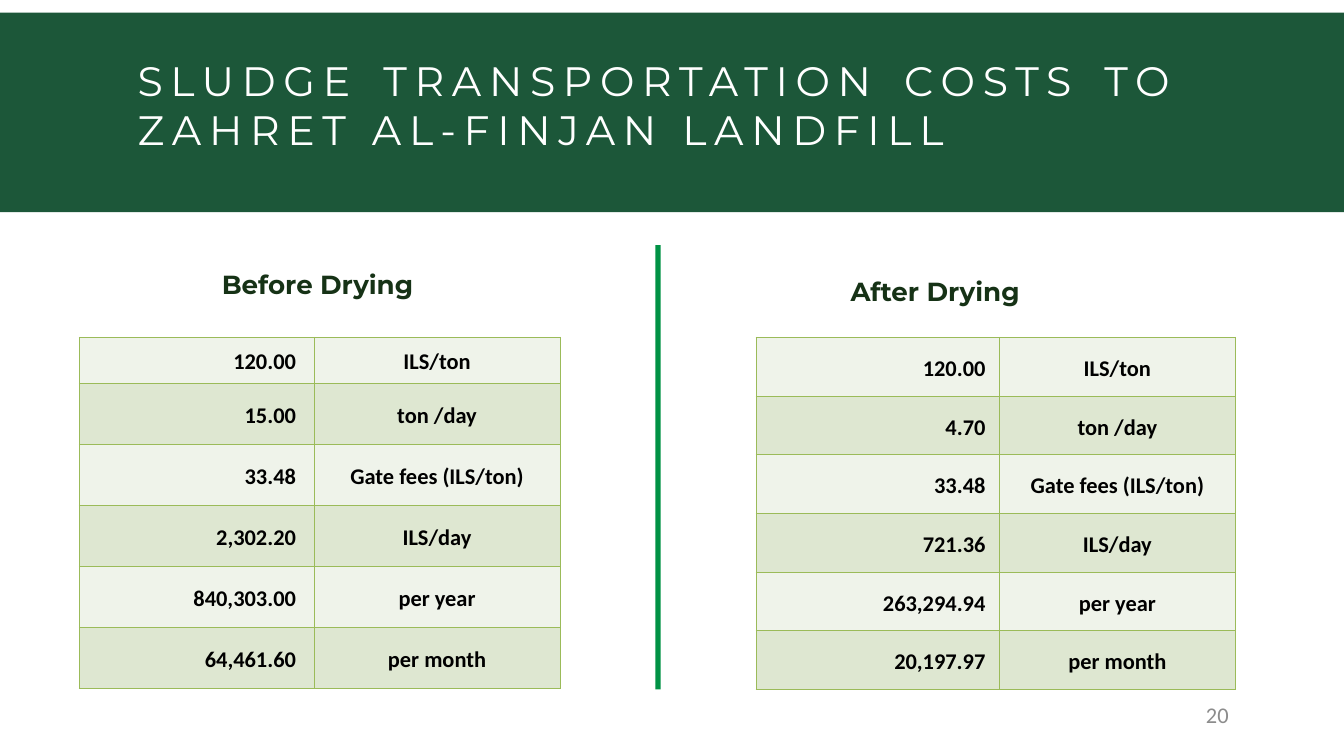
import pptx
import pptx.util
import pptx.dml.color
import pptx.enum.shapes
import pptx.enum.text
import pptx.oxml
import pptx.oxml.ns

Cm = pptx.util.Cm
Pt = pptx.util.Pt
RGBColor = pptx.dml.color.RGBColor
ALIGN = pptx.enum.text.PP_ALIGN
ANCHOR = pptx.enum.text.MSO_ANCHOR

BAND_GREEN = RGBColor(0x1C, 0x57, 0x39)
DIVIDER_GREEN = RGBColor(0x00, 0x92, 0x45)
HEADING_GREEN = RGBColor(0x16, 0x32, 0x16)
BORDER_GREEN = RGBColor(0x9B, 0xBB, 0x59)
ROW_FILLS = (RGBColor(0xEF, 0xF3, 0xEA), RGBColor(0xDE, 0xE7, 0xD1))
WHITE = RGBColor(0xFF, 0xFF, 0xFF)
BLACK = RGBColor(0, 0, 0)
GREY = RGBColor(0x8C, 0x8C, 0x8C)

UNITS = ("ILS/ton", "ton /day", "Gate fees (ILS/ton)", "ILS/day", "per year", "per month")
BEFORE = ("120.00", "15.00", "33.48", "2,302.20", "840,303.00", "64,461.60")
AFTER = ("120.00", "4.70", "33.48", "721.36", "263,294.94", "20,197.97")


class SlideBuilder:
    heading_font = "Montserrat"
    body_font = "Calibri"

    def __init__(self, prs):
        self.s = prs.slides.add_slide(prs.slide_layouts[5])

    def add_text(self, tf, text, size, color, font, align, bold=False, spacing=None):
        p = tf.paragraphs[0]
        p.alignment = align
        if spacing:
            p.line_spacing = spacing
        r = p.add_run()
        r.text = text
        r.font.size = Pt(size)
        r.font.name = font
        r.font.bold = bold
        r.font.color.rgb = color
        return r

    def frame(self, sp, anchor):
        tf = sp.text_frame
        tf.word_wrap = True
        tf.auto_size = pptx.enum.text.MSO_AUTO_SIZE.NONE
        tf.vertical_anchor = anchor
        tf.margin_left = tf.margin_right = tf.margin_top = tf.margin_bottom = 0
        return tf

    def rect(self, x, y, w, h, color):
        sp = self.s.shapes.add_shape(
            pptx.enum.shapes.MSO_SHAPE.RECTANGLE, Cm(x), Cm(y), Cm(w), Cm(h))
        sp.shadow.inherit = False
        sp.fill.solid()
        sp.fill.fore_color.rgb = color
        sp.line.fill.background()

    def title(self, x, y, w, h, text):
        sp = self.s.shapes.title
        sp.left, sp.top, sp.width, sp.height = Cm(x), Cm(y), Cm(w), Cm(h)
        sp.element.getparent().append(sp.element)
        tf = self.frame(sp, ANCHOR.TOP)
        r = self.add_text(tf, text, 44, WHITE, self.heading_font, ALIGN.JUSTIFY)
        r.font._element.set("spc", "820")

    def heading(self, x, y, w, h, text):
        sp = self.s.shapes.add_textbox(Cm(x), Cm(y), Cm(w), Cm(h))
        self.add_text(self.frame(sp, ANCHOR.TOP), text, 28, HEADING_GREEN,
                      self.heading_font, ALIGN.CENTER, True, Pt(32.3))

    def page_number(self, x, y, w, h, text):
        sp = self.s.shapes.add_textbox(Cm(x), Cm(y), Cm(w), Cm(h))
        tf = self.frame(sp, ANCHOR.MIDDLE)
        tf.margin_right = Cm(0.25)
        self.add_text(tf, text, 24, GREY, self.body_font, ALIGN.RIGHT)

    def border(self, cell):
        tc_pr = cell._tc.get_or_add_tcPr()
        for side in ("lnL", "lnR", "lnT", "lnB"):
            tc_pr.append(pptx.oxml.parse_xml(
                f'<a:{side} {pptx.oxml.ns.nsdecls("a")} w="12700"><a:solidFill>'
                f'<a:srgbClr val="{BORDER_GREEN}"/></a:solidFill></a:{side}>'))

    def cost_table(self, x, y, col_widths, row_heights, values, value_inset):
        table = self.s.shapes.add_table(
            len(values), 2, Cm(x), Cm(y), Cm(sum(col_widths)), Cm(sum(row_heights))).table
        table.first_row = table.horz_banding = False
        for col, width in zip(table.columns, col_widths):
            col.width = Cm(width)
        for i, (row, height) in enumerate(zip(table.rows, row_heights)):
            row.height = Cm(height)
            columns = ((values[i], ALIGN.RIGHT, value_inset), (UNITS[i], ALIGN.CENTER, 0.18))
            for cell, (text, align, inset) in zip(row.cells, columns):
                self.border(cell)
                cell.fill.solid()
                cell.fill.fore_color.rgb = ROW_FILLS[i % 2]
                cell.vertical_anchor = ANCHOR.MIDDLE
                cell.margin_left, cell.margin_right = Cm(0.18), Cm(inset)
                cell.margin_top = cell.margin_bottom = 0
                self.add_text(cell.text_frame, text, 24, BLACK, self.body_font,
                              align, True, 1.15)


def main():
    prs = pptx.Presentation()
    prs.slide_width, prs.slide_height = Cm(50.8), Cm(28.58)
    b = SlideBuilder(prs)
    b.rect(0, 0.48, 50.8, 7.54, BAND_GREEN)
    b.rect(24.77, 9.27, 0.2, 16.79, DIVIDER_GREEN)
    b.title(5.2, 2.1, 39.35, 3.76, "SLUDGE TRANSPORTATION COSTS TO ZAHRET AL-FINJAN LANDFILL")
    b.heading(29.87, 10.46, 10.95, 2.29, "After Drying")
    b.heading(8.2, 10.2, 7.6, 1.15, "Before Drying")
    b.page_number(40.77, 26.52, 5.92, 1.02, "20")
    b.cost_table(3, 12.75, (8.87, 9.3), [1.74] + [2.31] * 5, BEFORE, 0.68)
    b.cost_table(28.58, 12.75, (9.2, 8.91), [2.22] * 6, AFTER, 0.53)
    prs.save("out.pptx")


if __name__ == "__main__":
    main()
